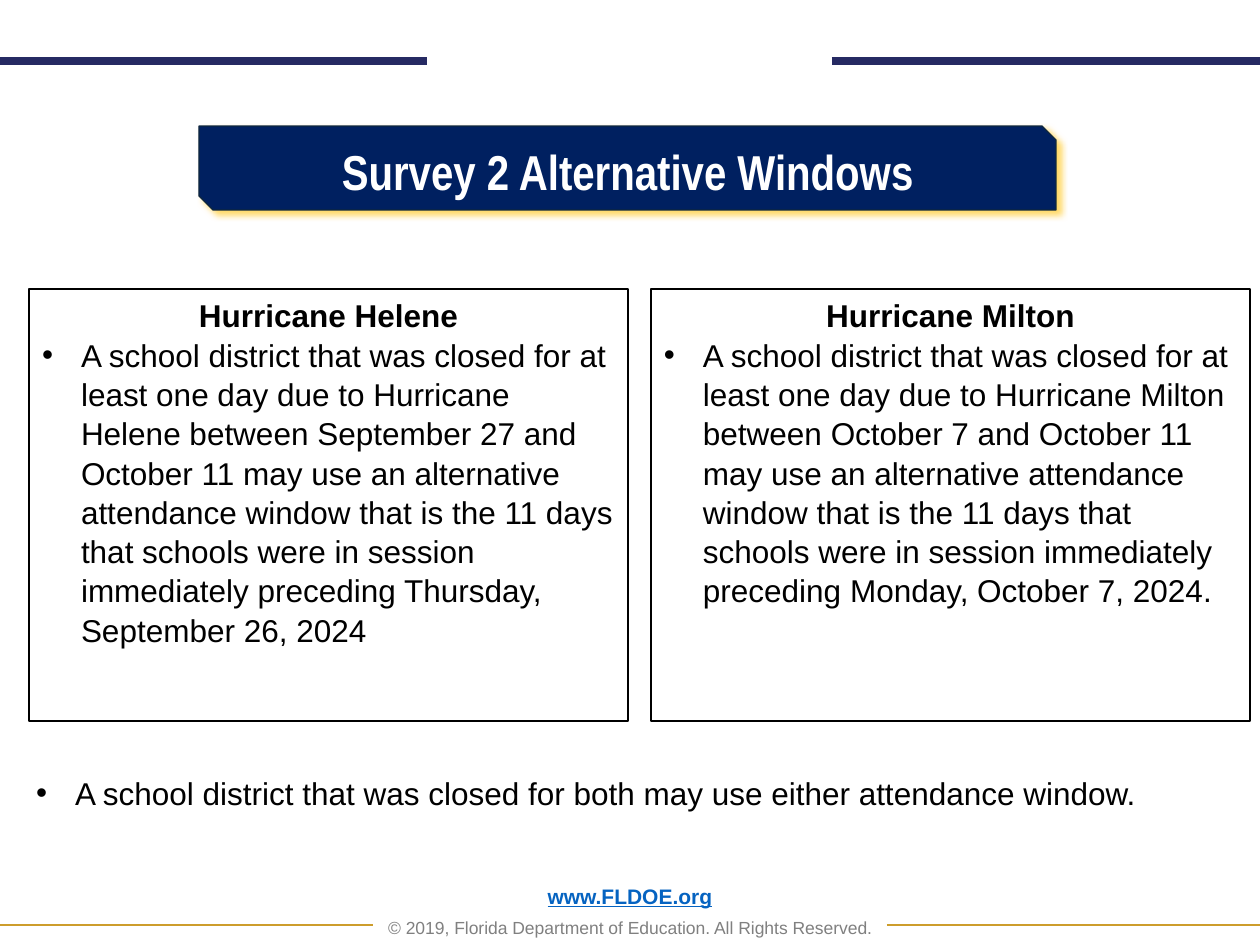
from lxml import etree
from pptx import Presentation
from pptx.dml.color import RGBColor
from pptx.enum.shapes import MSO_CONNECTOR, MSO_SHAPE
from pptx.enum.text import MSO_ANCHOR, MSO_AUTO_SIZE, PP_ALIGN
from pptx.oxml.ns import qn
from pptx.util import Pt

PX = 914400 // 126
WIDE, HIGH = 1260, 945
LEFT, MID = PP_ALIGN.LEFT, PP_ALIGN.CENTER
TOP, CORE, LOW = MSO_ANCHOR.TOP, MSO_ANCHOR.MIDDLE, MSO_ANCHOR.BOTTOM
RECT, SNIP = MSO_SHAPE.RECTANGLE, MSO_SHAPE.SNIP_2_DIAG_RECTANGLE
LINE = MSO_CONNECTOR.STRAIGHT
FIXED = MSO_AUTO_SIZE.NONE

BLACK = RGBColor(0x00, 0x00, 0x00)
WHITE = RGBColor(0xFF, 0xFF, 0xFF)
NAVY = RGBColor(0x00, 0x20, 0x60)
EDGE = RGBColor(0x0F, 0x27, 0x3D)
RULE = RGBColor(0x26, 0x2A, 0x63)
GOLD = RGBColor(0xCD, 0x9D, 0x2C)
GLOW = RGBColor(0xFF, 0xD9, 0x66)
LINK = RGBColor(0x05, 0x63, 0xC1)
GREY = RGBColor(0x80, 0x80, 0x80)


def place(item, box):
    item.left, item.top, item.width, item.height = [n * PX for n in box]


def setup(frame, anchor=TOP):
    frame.word_wrap = True
    frame.auto_size = FIXED
    frame.vertical_anchor = anchor
    frame.margin_left = frame.margin_right = 13 * PX
    frame.margin_top = frame.margin_bottom = 6 * PX


def write(frame, text, size=18, face="Arial", color=BLACK, bold=False,
          under=False, align=LEFT, bullet=False, before=0, pitch=1.04):
    para = frame.paragraphs[0]
    if para.runs:
        para = frame.add_paragraph()
    para.alignment = align
    para.space_before = Pt(before)
    para.line_spacing = pitch
    if bullet:
        props = para._p.get_or_add_pPr()
        props.set("marL", str(39 * PX))
        props.set("indent", str(-39 * PX))
        etree.SubElement(props, qn("a:buFont")).set("typeface", "Arial")
        etree.SubElement(props, qn("a:buChar")).set("char", "•")
    run = para.add_run()
    run.text = text
    font = run.font
    font.size, font.name = Pt(size), face
    font.bold, font.underline = bold, under
    font.color.rgb = color


def block(slide, kind, box, fill, line, width):
    item = slide.shapes.add_shape(kind, *[n * PX for n in box])
    item.shadow.inherit = False
    item.fill.solid()
    item.fill.fore_color.rgb = fill
    item.line.color.rgb = line
    item.line.width = Pt(width)
    return item


def rules(slide, y, left, right, color, width):
    for start, end in ((0, left), (right, WIDE)):
        rule = slide.shapes.add_connector(
            LINE, start * PX, y * PX, end * PX, y * PX)
        rule.line.color.rgb = color
        rule.line.width = Pt(width)
        etree.SubElement(rule._element.spPr, qn("a:effectLst"))


def footer(slide, box):
    frame = slide.shapes.add_textbox(*[n * PX for n in box]).text_frame
    setup(frame, LOW)
    write(frame, "www.FLDOE.org", size=12, color=LINK, bold=True,
          under=True, align=MID, pitch=0.9)
    write(frame,
          "© 2019, Florida Department of Education. All Rights Reserved.",
          size=10, color=GREY, align=MID, before=6, pitch=0.9)


def banner(slide, box, text):
    item = block(slide, SNIP, box, NAVY, EDGE, 0.75)
    effects = item._element.spPr.find(qn("a:effectLst"))
    shade = etree.SubElement(effects, qn("a:outerShdw"), blurRad=str(Pt(4)),
                             dist=str(Pt(3)), dir=str(45 * 60000),
                             algn="tl", rotWithShape="0")
    etree.SubElement(shade, qn("a:srgbClr")).set("val", str(GLOW))
    title = slide.shapes.title
    x, y, w, h = box
    place(title, (x + 19, y + 9, w - 38, h - 13))
    item._element.addnext(title._element)
    setup(title.text_frame, CORE)
    write(title.text_frame, text, size=28, face="Arial Narrow",
          color=WHITE, bold=True, align=MID, pitch=1.0)


def panel(slide, box, head, text):
    frame = block(slide, RECT, box, WHITE, BLACK, 1).text_frame
    setup(frame)
    write(frame, head, bold=True, align=MID)
    write(frame, text, bullet=True)


def note(slide, box, text):
    body = slide.placeholders[1]
    place(body, box)
    setup(body.text_frame, LOW)
    write(body.text_frame, text, bullet=True)


def main():
    deck = Presentation()
    deck.slide_width, deck.slide_height = WIDE * PX, HIGH * PX
    slide = deck.slides.add_slide(deck.slide_layouts[1])
    footer(slide, (87, 890, 1086, 54))
    rules(slide, 61, 427, 832, RULE, 5)
    rules(slide, 925, 373, 887, GOLD, 1)
    banner(slide, (199, 126, 857, 84), "Survey 2 Alternative Windows")
    note(slide, (23, 693, 1220, 125),
         "A school district that was closed for both may use either "
         "attendance window.")
    storms = (
        ("Helene", "September 27 and October 11", "Thursday, September 26, 2024"),
        ("Milton", "October 7 and October 11", "Monday, October 7, 2024."),
    )
    for i, (name, span, day) in enumerate(storms):
        panel(slide, (29 + 622 * i, 289, 599, 432), f"Hurricane {name}",
              "A school district that was closed for at least one day due to "
              f"Hurricane {name} between {span} may use an alternative "
              "attendance window that is the 11 days that schools were in "
              f"session immediately preceding {day}")
    deck.save("out.pptx")


if __name__ == "__main__":
    main()
